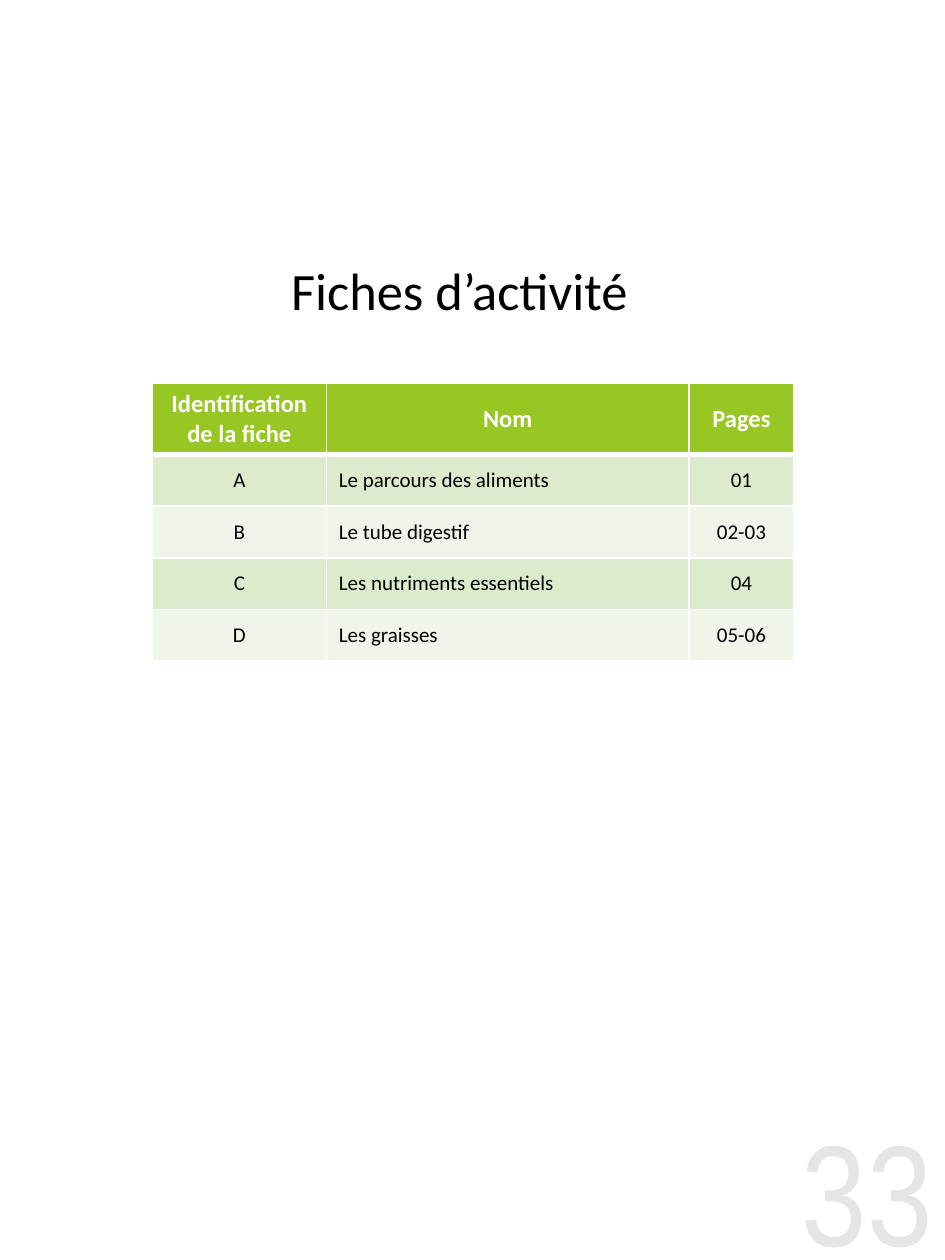
import pptx
import pptx.dml.color
import pptx.enum.text
import pptx.oxml.ns
import pptx.util
from lxml import etree

RGBColor = pptx.dml.color.RGBColor
PP_ALIGN = pptx.enum.text.PP_ALIGN
MSO_ANCHOR = pptx.enum.text.MSO_ANCHOR
Inches = pptx.util.Inches
Pt = pptx.util.Pt
qn = pptx.oxml.ns.qn

WHITE = RGBColor(0xFF, 0xFF, 0xFF)
BLACK = RGBColor(0x00, 0x00, 0x00)
GREEN = RGBColor(0x98, 0xC7, 0x23)
BANDS = [RGBColor(0xDD, 0xEB, 0xCD), RGBColor(0xEF, 0xF5, 0xE8)]
PALE_GREY = RGBColor(0xE5, 0xE5, 0xE5)

COL_WIDTHS = [1.38, 2.88, 0.83]
HEADER_HEIGHT = 0.56
ROW_HEIGHT = 0.41
ROWS = [
    ["Identification\nde la fiche", "Nom", "Pages"],
    ["A", "Le parcours des aliments", "01"],
    ["B", "Le tube digestif", "02-03"],
    ["C", "Les nutriments essentiels", "04"],
    ["D", "Les graisses", "05-06"],
]


def write(tf, text, size, color, align, bold=False, name="Calibri"):
    tf.text = text
    for p in tf.paragraphs:
        p.alignment = align
        p.font.name = name
        p.font.size = Pt(size)
        p.font.bold = bold
        p.font.color.rgb = color


def set_borders(cell, widths):
    tcPr = cell._tc.get_or_add_tcPr()
    for side, width in zip("LRTB", widths):
        ln = etree.SubElement(tcPr, qn(f"a:ln{side}"), w=str(Pt(width)))
        fill = etree.SubElement(ln, qn("a:solidFill"))
        etree.SubElement(fill, qn("a:srgbClr"), val=str(WHITE))


def add_title(s, text):
    sp = s.shapes.title
    sp.left, sp.top = Inches(2.21), Inches(2)
    sp.width, sp.height = Inches(3), Inches(0.61)
    tf = sp.text_frame
    tf.auto_size = pptx.enum.text.MSO_AUTO_SIZE.NONE
    tf.vertical_anchor = MSO_ANCHOR.TOP
    write(tf, text, 30, BLACK, PP_ALIGN.LEFT)


def add_activity_table(s):
    height = HEADER_HEIGHT + ROW_HEIGHT * (len(ROWS) - 1)
    table = s.shapes.add_table(
        len(ROWS), len(COL_WIDTHS), Inches(1.21), Inches(3.04),
        Inches(sum(COL_WIDTHS)), Inches(height)).table
    for column, width in zip(table.columns, COL_WIDTHS):
        column.width = Inches(width)
    for i, texts in enumerate(ROWS):
        header = i == 0
        table.rows[i].height = Inches(HEADER_HEIGHT if header else ROW_HEIGHT)
        for j, text in enumerate(texts):
            cell = table.cell(i, j)
            set_borders(cell, [1, 1, 3 if i == 1 else 1, 3 if header else 1])
            cell.fill.solid()
            cell.fill.fore_color.rgb = GREEN if header else BANDS[(i - 1) % 2]
            cell.vertical_anchor = MSO_ANCHOR.MIDDLE
            left = j == 1 and not header
            write(cell.text_frame, text, 14 if header else 12,
                  WHITE if header else BLACK,
                  PP_ALIGN.LEFT if left else PP_ALIGN.CENTER, header)


def add_page_number(s, text):
    sp = s.shapes.add_textbox(Inches(5.9), Inches(8.75), Inches(1.5), Inches(1.25))
    tf = sp.text_frame
    tf.word_wrap = True
    tf.margin_left = tf.margin_right = tf.margin_top = tf.margin_bottom = 0
    write(tf, text, 82, PALE_GREY, PP_ALIGN.RIGHT, name="Arial Narrow")


def main():
    prs = pptx.Presentation()
    prs.slide_width, prs.slide_height = Inches(7.5), Inches(10)
    s = prs.slides.add_slide(prs.slide_layouts[5])
    add_page_number(s, "33")
    add_activity_table(s)
    add_title(s, "Fiches d’activité")
    prs.save("out.pptx")


if __name__ == "__main__":
    main()
